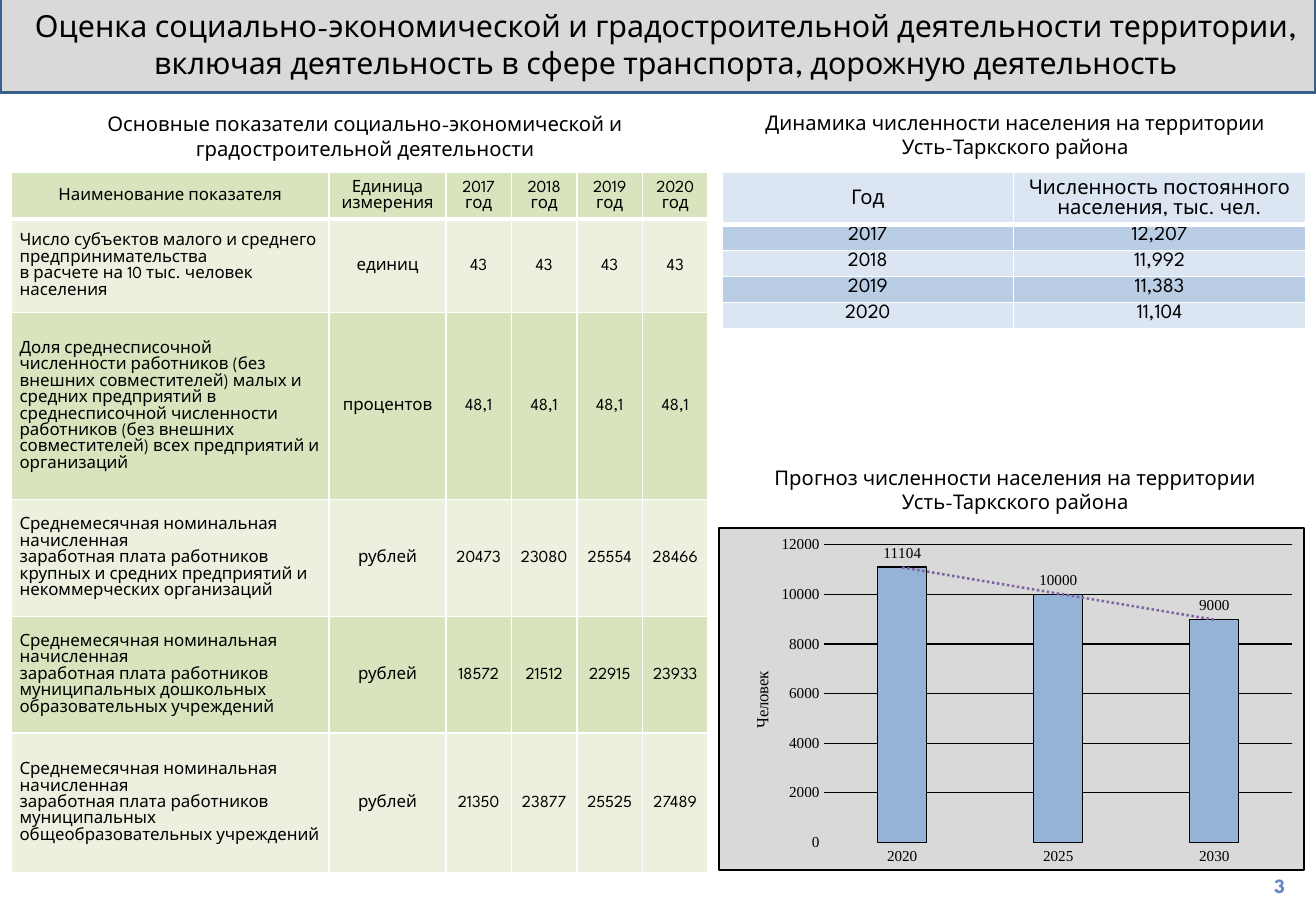
"""Build the slide on the social and economic indicators of the territory."""
from lxml import etree
from pptx import Presentation, util as u
from pptx.chart.data import CategoryChartData
from pptx.dml.color import RGBColor
from pptx.enum import chart as ch, dml, shapes, text
from pptx.oxml import parse_xml
from pptx.oxml.ns import nsdecls, qn

FONT, AXIS_FONT = "League Spartan", "Times New Roman"
BLACK, WHITE, GREY = "000000", "FFFFFF", "D9D9D9"
GREEN, BLUE = ("D7E4BD", "EBF1DE"), ("DCE6F2", "B9CDE5")
C, L, R = text.PP_ALIGN.CENTER, text.PP_ALIGN.LEFT, text.PP_ALIGN.RIGHT
TOP, MIDDLE, BOTTOM = text.MSO_ANCHOR.TOP, text.MSO_ANCHOR.MIDDLE, text.MSO_ANCHOR.BOTTOM

TITLE = ("Оценка социально-экономической и градостроительной деятельности территории, "
         "включая деятельность в сфере транспорта, дорожную деятельность")
HEADINGS = [
    ("Основные показатели социально-экономической и градостроительной деятельности", 1.5, 2.21),
    ("Динамика численности населения на территории\nУсть-Таркского района", 15.09, 2.18),
    ("Прогноз численности населения на территории\nУсть-Таркского района", 15.09, 9.6),
]
WAGE = "Среднемесячная номинальная начисленная\nзаработная плата работников "
INDICATORS = [
    ("Наименование показателя", "Единица измерения",
     "2017 год", "2018 год", "2019 год", "2020 год"),
    ("Число субъектов малого и среднего предпринимательства\n"
     "в расчете на 10 тыс. человек населения", "единиц", "43", "43", "43", "43"),
    ("Доля среднесписочной численности работников (без внешних совместителей) малых "
     "и средних предприятий в среднесписочной численности работников (без внешних "
     "совместителей) всех предприятий и организаций",
     "процентов", "48,1", "48,1", "48,1", "48,1"),
    (WAGE + "крупных и средних предприятий и некоммерческих организаций",
     "рублей", "20473", "23080", "25554", "28466"),
    (WAGE + "муниципальных дошкольных образовательных учреждений",
     "рублей", "18572", "21512", "22915", "23933"),
    (WAGE + "муниципальных общеобразовательных учреждений",
     "рублей", "21350", "23877", "25525", "27489"),
]
POPULATION = [
    ("Год", "Численность постоянного населения, тыс. чел."),
    ("2017", "12,207"), ("2018", "11,992"), ("2019", "11,383"), ("2020", "11,104"),
]
FORECAST = {"2020": 11104, "2025": 10000, "2030": 9000}


def rgb(value):
    return RGBColor.from_string(value)


def paint(part, fill, line, width):
    part.fill.solid()
    part.fill.fore_color.rgb = rgb(fill)
    part.line.color.rgb = rgb(line)
    part.line.width = u.Pt(width)


def style_font(font, size, name=FONT, color=BLACK, bold=False):
    font.size, font.name, font.bold = u.Pt(size), name, bold
    font.color.rgb = rgb(color)


def write(tf, content, size, align=C, spacing=None, **look):
    for i, line in enumerate(content.split("\n")):
        p = tf.paragraphs[0] if i == 0 else tf.add_paragraph()
        p.alignment = align
        if spacing:
            p.line_spacing = spacing
        r = p.add_run()
        r.text = line
        style_font(r.font, size, **look)


def add_text(s, content, box, size, align=C, anchor=TOP, **look):
    tf = s.shapes.add_textbox(*map(u.Cm, box)).text_frame
    tf.word_wrap = True
    tf.vertical_anchor = anchor
    write(tf, content, size, align, **look)


def set_borders(cell, header):
    tc_pr = cell._tc.get_or_add_tcPr()
    for side in "LRTB":
        width = 3 if header and side == "B" else 1
        ln = etree.SubElement(tc_pr, qn(f"a:ln{side}"), w=str(u.Pt(width)))
        fill = etree.SubElement(ln, qn("a:solidFill"))
        etree.SubElement(fill, qn("a:srgbClr"), val=WHITE)


def add_table(s, rows, left, top, widths, heights, size, bands, body_anchor, first_align):
    frame = s.shapes.add_table(len(rows), len(widths), u.Cm(left), u.Cm(top),
                               u.Cm(sum(widths)), u.Cm(sum(heights)))
    table = frame.table
    table.horz_banding = table.first_row = False
    for column, width in zip(table.columns, widths):
        column.width = u.Cm(width)
    for i, (row, height) in enumerate(zip(rows, heights)):
        table.rows[i].height = u.Cm(height)
        for j, value in enumerate(row):
            cell = table.cell(i, j)
            cell.margin_left = cell.margin_right = u.Cm(0.18)
            cell.margin_top = cell.margin_bottom = 0
            cell.vertical_anchor = body_anchor if i else MIDDLE
            write(cell.text_frame, value, size, first_align if i and j == 0 else C, 1.07)
            set_borders(cell, i == 0)
            cell.fill.solid()
            cell.fill.fore_color.rgb = rgb(bands[i and bands_index(i, bands)])


def bands_index(row, bands):
    return row % 2


def manual_layout(x, y, w=None, h=None):
    parts = "".join(f'<c:{k} val="{v}"/>' for k, v in
                    (("xMode", "edge"), ("yMode", "edge"), ("x", x), ("y", y), ("w", w), ("h", h))
                    if v is not None)
    target = '<c:layoutTarget val="inner"/>' if w else ""
    return parse_xml(f'<c:layout {nsdecls("c")}><c:manualLayout>{target}{parts}'
                     '</c:manualLayout></c:layout>')


def place(parent, layout, index):
    for old in parent.findall(qn("c:layout")):
        parent.remove(old)
    parent.insert(index, layout)


def add_forecast(s, box):
    data = CategoryChartData()
    data.categories = list(FORECAST)
    data.add_series("Население", FORECAST.values())
    chart = s.shapes.add_chart(ch.XL_CHART_TYPE.COLUMN_CLUSTERED, *map(u.Cm, box), data).chart
    chart.has_legend = chart.has_title = False
    style_font(chart.font, 10, "Calibri")

    plot = chart.plots[0]
    plot.gap_width, plot.overlap, plot.vary_by_categories = 219, -27, False
    plot.has_data_labels = True
    series = plot.series[0]
    paint(series.format, "95B3D7", BLACK, 0.75)
    labels = series.data_labels
    labels.show_value = True
    labels.position = ch.XL_LABEL_POSITION.OUTSIDE_END
    style_font(labels.font, 9, AXIS_FONT)
    series._element.find(qn("c:dLbls")).addnext(parse_xml(
        f'<c:trendline {nsdecls("c", "a")}><c:spPr><a:ln w="{u.Pt(1.5)}"><a:solidFill>'
        '<a:srgbClr val="8064A2"/></a:solidFill><a:prstDash val="sysDot"/></a:ln></c:spPr>'
        '<c:trendlineType val="linear"/><c:dispRSqr val="0"/><c:dispEq val="0"/></c:trendline>'))

    years, people = chart.category_axis, chart.value_axis
    for axis in (years, people):
        axis.major_tick_mark = axis.minor_tick_mark = ch.XL_TICK_MARK.NONE
        style_font(axis.tick_labels.font, 9, AXIS_FONT)
    years.format.line.color.rgb = rgb(GREY)
    years.format.line.width = u.Pt(0.75)
    people.format.line.fill.background()
    people.minimum_scale, people.maximum_scale, people.major_unit = 0, 12000, 2000
    people.major_gridlines.format.line.color.rgb = rgb(BLACK)
    people.major_gridlines.format.line.width = u.Pt(0.75)
    write(people.axis_title.text_frame, "Человек", 10, name=AXIS_FONT)
    title = people.axis_title._element
    title.find(".//" + qn("a:bodyPr")).set("rot", "-5400000")
    place(title, manual_layout(0.05, 0.41), 1)

    space = chart._chartSpace
    place(space.find(".//" + qn("c:plotArea")), manual_layout(0.18, 0.05, 0.8, 0.87), 0)
    space.find(qn("c:chart")).addnext(parse_xml(
        f'<c:spPr {nsdecls("c", "a")}><a:solidFill><a:srgbClr val="{GREY}"/></a:solidFill>'
        f'<a:ln w="{u.Pt(1)}"><a:solidFill><a:srgbClr val="{BLACK}"/></a:solidFill></a:ln></c:spPr>'))


def main():
    prs = Presentation()
    prs.slide_width, prs.slide_height = u.Cm(27.51), u.Cm(19.05)
    s = prs.slides.add_slide(prs.slide_layouts[6])
    band = s.shapes.add_shape(shapes.MSO_SHAPE.RECTANGLE,
                              *map(u.Cm, (0, -0.13, 27.51, 2.06)))
    band.shadow.inherit = False
    paint(band, GREY, "3A5F8C", 2)
    add_text(s, TITLE, (0.3, 0.03, 27.25, 1.8), 18)
    add_table(s, POPULATION, 15.09, 3.61, [6.1] * 2, [1.07] + [0.54] * 4, 12, BLUE, TOP, C)
    add_forecast(s, (15.01, 11.02, 12.27, 7.19))
    add_table(s, INDICATORS, 0.23, 3.61, [6.65, 2.44] + [1.37] * 4,
              [0.97, 1.96, 3.91, 2.44, 2.44, 2.92], 10, GREEN, MIDDLE, L)
    for heading, left, top in HEADINGS:
        add_text(s, heading, (left, top, 12.27, 1.27), 12)
    add_text(s, "3", (20.68, 17.58, 6.43, 1.32), 12, R, BOTTOM, color="6987C3", bold=True)
    prs.save("out.pptx")


if __name__ == "__main__":
    main()
